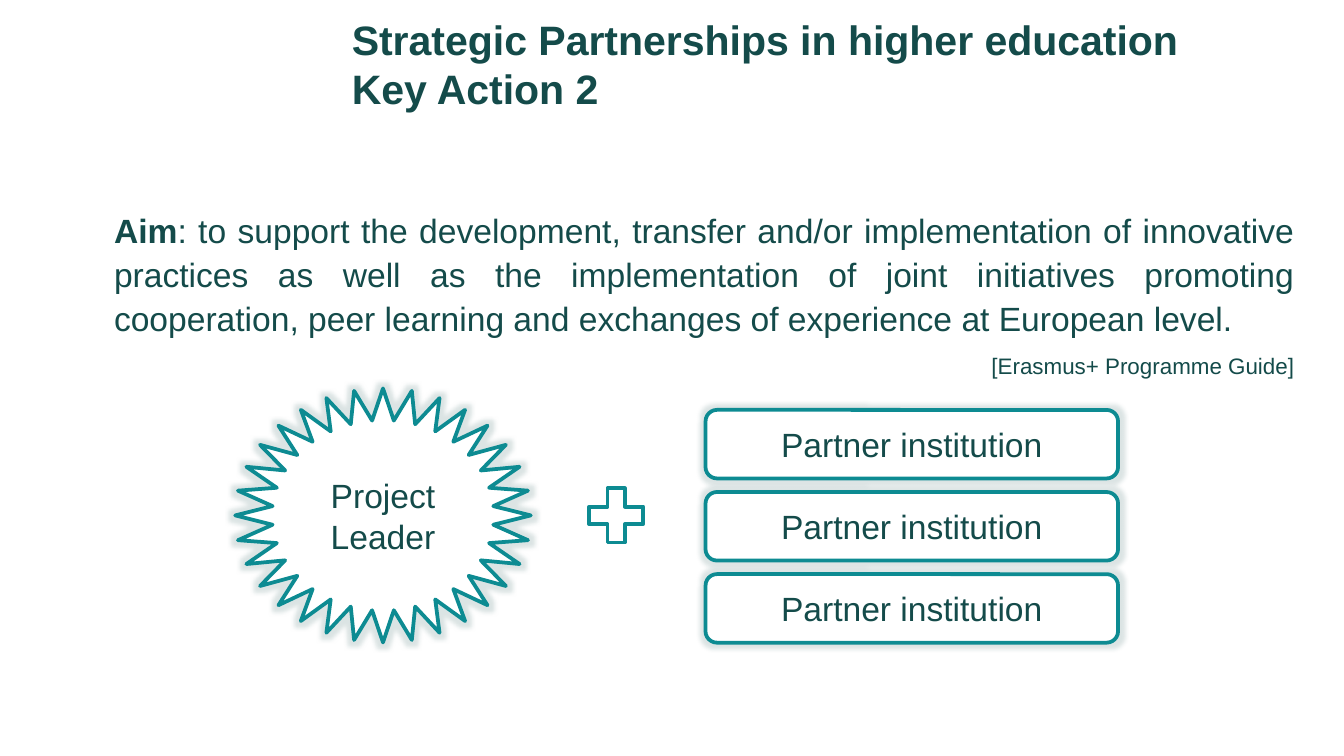
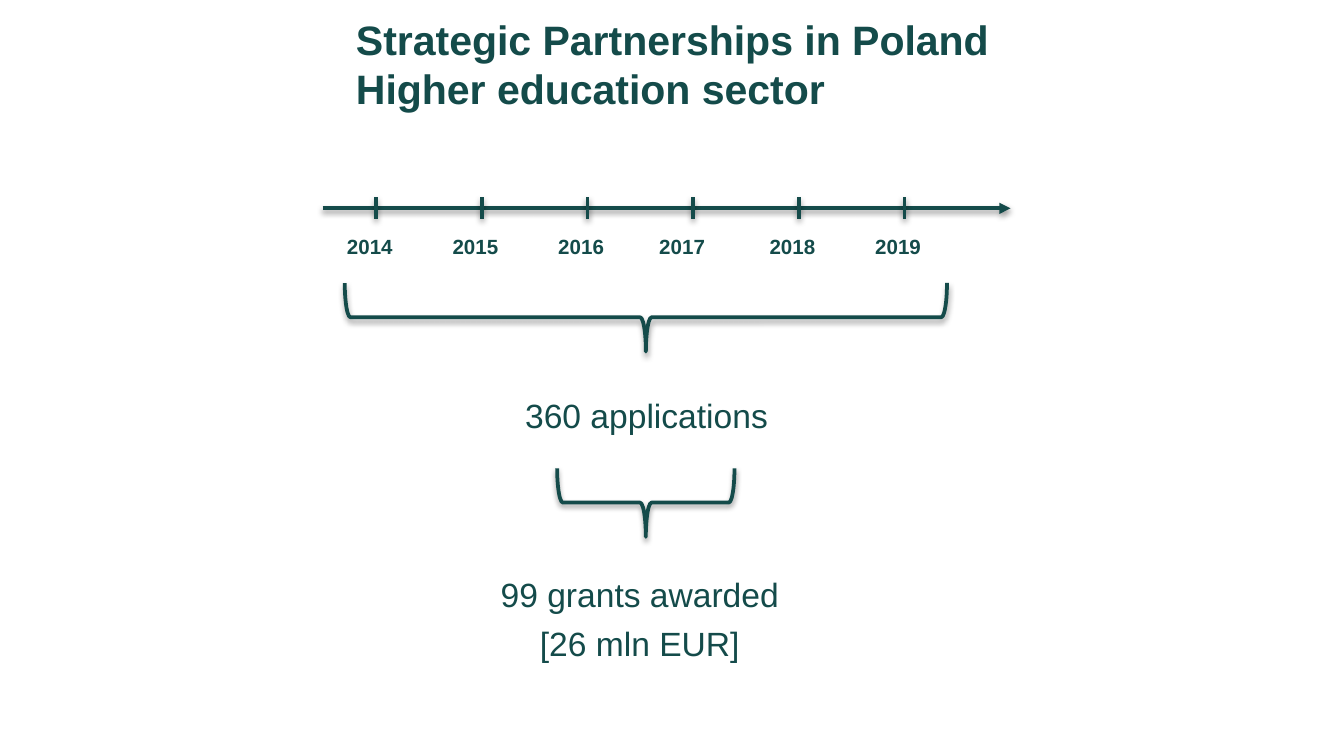
import dataclasses

import pptx
import pptx.dml.color
import pptx.enum.shapes
import pptx.enum.text
import pptx.oxml
import pptx.oxml.ns
import pptx.util

Pt = pptx.util.Pt
SHAPE = pptx.enum.shapes.MSO_SHAPE
ALIGN = pptx.enum.text.PP_ALIGN
ANCHOR = pptx.enum.text.MSO_ANCHOR
FIT = pptx.enum.text.MSO_AUTO_SIZE


@dataclasses.dataclass(frozen=True)
class Theme:
    font: str = "Arial"
    ink: str = "144B4A"
    teal: str = "0D8B92"
    white: str = "FFFFFF"
    title: int = 22
    body: int = 18
    source: int = 12
    year: int = 11
    line: int = 2


def rgb(value):
    return pptx.dml.color.RGBColor.from_string(value)


def effect(tag, color, alpha, **attrs):
    """Return a glow or shadow element."""
    extra = " ".join(f'{k}="{v}"' for k, v in attrs.items())
    return pptx.oxml.parse_xml(
        f'<a:{tag} {pptx.oxml.ns.nsdecls("a")} {extra}><a:srgbClr val="{color}">'
        f'<a:alpha val="{alpha * 1000}"/></a:srgbClr></a:{tag}>')


class Deck:
    def __init__(self, theme):
        self.theme = theme
        self.prs = pptx.Presentation()
        self.prs.slide_width, self.prs.slide_height = Pt(720), Pt(405)
        self.s = None

    def slide(self, title, left, width, height):
        self.s = self.prs.slides.add_slide(self.prs.slide_layouts[6])
        self.text(left, 4.3, width, height,
                  [([(title, {"size": Pt(self.theme.title), "bold": True})], {})],
                  auto_size=FIT.NONE)

    def fill_text(self, tf, paragraphs):
        """Each paragraph is (runs, paragraph format); each run is (text, font format)."""
        for i, (runs, layout) in enumerate(paragraphs):
            p = tf.paragraphs[0] if i == 0 else tf.add_paragraph()
            for name, value in layout.items():
                setattr(p, name, value)
            for text, style in runs:
                for n, part in enumerate(text.split("\n")):
                    if n:
                        p.add_line_break()
                    r = p.add_run()
                    r.text = part
                    base = {"name": self.theme.font, "size": Pt(self.theme.body)}
                    for name, value in {**base, **style}.items():
                        setattr(r.font, name, value)
                    r.font.color.rgb = rgb(self.theme.ink)

    def text(self, x, y, w, h, paragraphs, auto_size=FIT.SHAPE_TO_FIT_TEXT):
        tf = self.s.shapes.add_textbox(Pt(x), Pt(y), Pt(w), Pt(h)).text_frame
        tf.word_wrap, tf.auto_size = True, auto_size
        self.fill_text(tf, paragraphs)

    def outline(self, line, color):
        line.color.rgb = rgb(color)
        line.width = Pt(self.theme.line)

    def shadow(self):
        return effect("outerShdw", "000000", 38, blurRad=Pt(3.1), dist=Pt(1.6),
                      dir=90 * 60000, rotWithShape=0)

    def shape(self, kind, x, y, w, h, text="", glow=True):
        sp = self.s.shapes.add_shape(kind, Pt(x), Pt(y), Pt(w), Pt(h))
        sp.shadow.inherit = False
        sp.fill.solid()
        sp.fill.fore_color.rgb = rgb(self.theme.white)
        self.outline(sp.line, self.theme.teal)
        if glow:
            sp._element.spPr.find(pptx.oxml.ns.qn("a:effectLst")).append(
                effect("glow", self.theme.ink, 15, rad=Pt(5)))
        if text:
            sp.text_frame.word_wrap = True
            sp.text_frame.vertical_anchor = ANCHOR.MIDDLE
            self.fill_text(sp.text_frame, [([(text, {})], {"alignment": ALIGN.CENTER})])

    def brace(self, center, top, span, depth=36.7):
        """A brace that opens upward, its point at the bottom."""
        sp = self.s.shapes.add_shape(
            SHAPE.LEFT_BRACE, Pt(center - depth / 2), Pt(top + (depth - span) / 2),
            Pt(depth), Pt(span))
        sp.rotation = 270
        sp.shadow.inherit = False
        sp.fill.background()
        self.outline(sp.line, self.theme.ink)
        sp._element.spPr.find(pptx.oxml.ns.qn("a:effectLst")).append(self.shadow())

    def line(self, x1, y1, x2, y2, arrow=False):
        c = self.s.shapes.add_connector(
            pptx.enum.shapes.MSO_CONNECTOR.STRAIGHT, Pt(x1), Pt(y1), Pt(x2), Pt(y2))
        self.outline(c.line, self.theme.ink)
        if arrow:
            c.line._get_or_add_ln().append(pptx.oxml.parse_xml(
                f'<a:tailEnd {pptx.oxml.ns.nsdecls("a")} type="triangle"/>'))
        effects = pptx.oxml.parse_xml(f'<a:effectLst {pptx.oxml.ns.nsdecls("a")}/>')
        effects.append(self.shadow())
        c._element.spPr.append(effects)


def partnerships(deck):
    deck.slide("Strategic Partnerships in higher education\nKey Action 2", 181.4, 598, 67.7)

    # Aim and its source
    spacing = {"line_spacing": 1.1, "space_after": Pt(6)}
    deck.text(54, 106.6, 646.6, 102.2, [
        ([("Aim", {"bold": True}),
          (": to support the development, transfer and/or implementation of innovative "
           "practices as well as the implementation of joint initiatives promoting "
           "cooperation, peer learning and exchanges of experience at European level.", {})],
         {"alignment": ALIGN.JUSTIFY, **spacing}),
        ([("[Erasmus+ Programme Guide]", {"size": Pt(deck.theme.source)})],
         {"alignment": ALIGN.RIGHT, **spacing}),
    ])

    # Leader plus partners
    deck.shape(SHAPE.STAR_32_POINT, 126, 208.1, 158.4, 136.1, "Project Leader")
    deck.shape(SHAPE.MATH_PLUS, 310.3, 256.3, 39.6, 39.6, glow=False)
    for i in range(3):
        deck.shape(SHAPE.ROUNDED_RECTANGLE, 378, 219.6 + 44 * i, 221, 36.7,
                   "Partner institution")


def poland(deck):
    deck.slide("Strategic Partnerships in Poland\nHigher education sector", 183.6, 426.2, 56.9)

    # Timeline
    axis = 111.6
    deck.line(172.8, axis, 541.4, axis, arrow=True)
    for i, year in enumerate(range(2014, 2020)):
        x = 201.6 + 56.6 * i
        deck.line(x, axis - 5.8, x, axis + 5.8)
        nudge = -2.5 if year == 2017 else 0
        deck.text(x - 22.8 + nudge, 121.7, 45.4, 20.9,
                  [([(str(year), {"size": Pt(deck.theme.year), "bold": True})], {})])

    # Results
    center = {"alignment": ALIGN.CENTER}
    deck.brace(346, 151.6, 322.6)
    deck.text(268.6, 208.1, 155.5, 28.8, [([("360 applications", {})], center)])
    deck.brace(346, 250.9, 95)
    deck.text(257.8, 303.8, 169.9, 78.5, [
        ([("99 grants awarded", {})], center),
        ([("[26 mln EUR]", {})], {**center, "space_before": Pt(5)}),
    ])


def main():
    deck = Deck(Theme())
    partnerships(deck)
    poland(deck)
    deck.prs.save("out.pptx")


if __name__ == "__main__":
    main()
